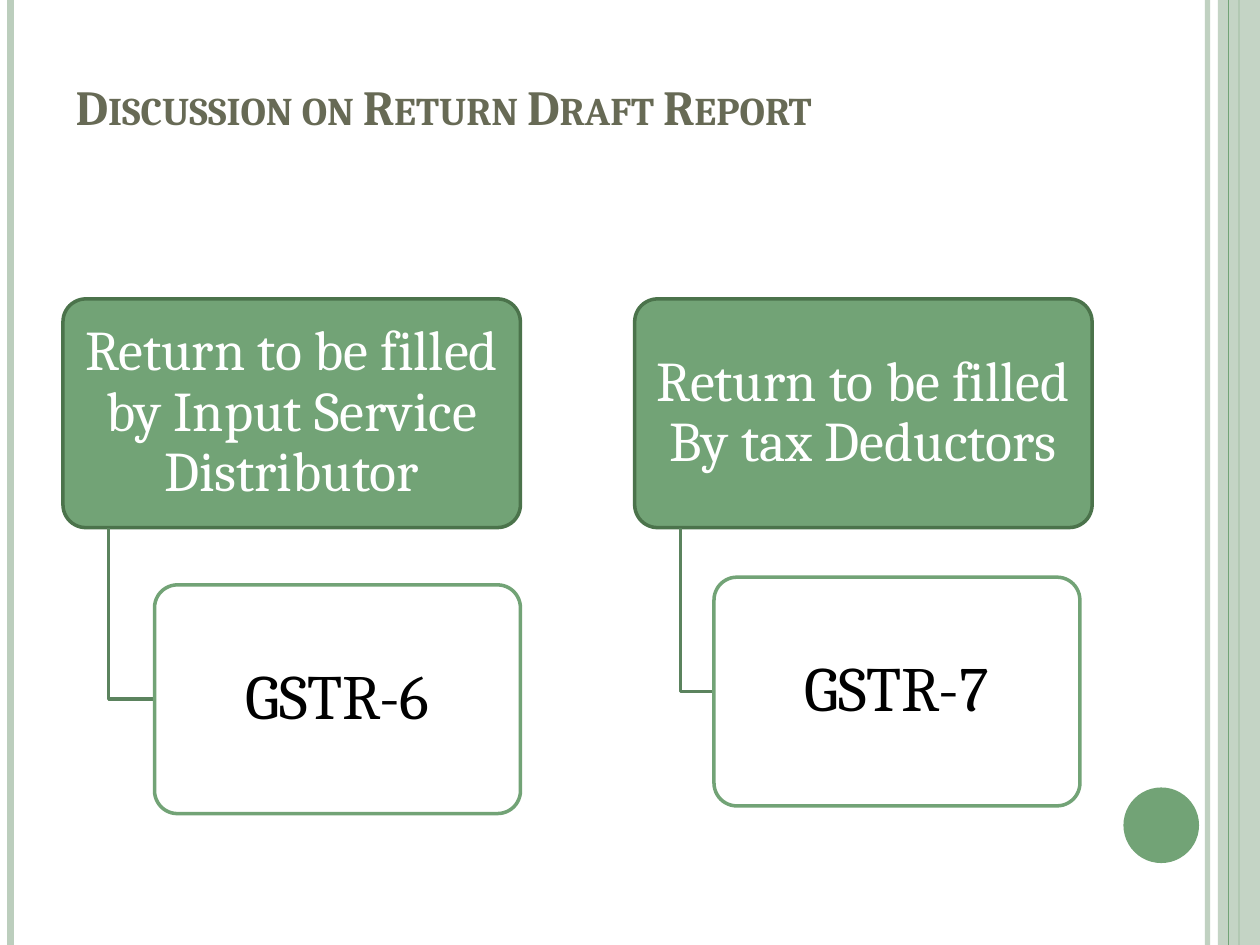
import pptx
import pptx.util
import pptx.dml.color
import pptx.enum.shapes
import pptx.enum.text
import pptx.oxml
import pptx.oxml.ns
from dataclasses import dataclass

Pt = pptx.util.Pt
SHAPES = pptx.enum.shapes.MSO_SHAPE
ALIGN = pptx.enum.text.PP_ALIGN
ANCHOR = pptx.enum.text.MSO_ANCHOR
A_NS = pptx.oxml.ns.nsdecls("a")


@dataclass(frozen=True)
class Theme:
    font: str = "Cambria"
    green: str = "72A376"
    pale: str = "BCCEBD"
    edge: str = "4B734B"
    link: str = "5B835E"
    title: str = "676A55"
    white: str = "FFFFFF"
    black: str = "000000"
    title_size: int = 28
    head_size: int = 32
    leaf_size: int = 36


def rgb(color):
    return pptx.dml.color.RGBColor.from_string(color)


def set_alpha(fill_parent, percent):
    """Make the solid colour below an element partly transparent."""
    for color in fill_parent.iter(pptx.oxml.ns.qn("a:srgbClr")):
        color.append(pptx.oxml.parse_xml(f'<a:alpha {A_NS} val="{percent * 1000}"/>'))


def write(tf, text, font, size, color, bold=False, align=ALIGN.LEFT,
          anchor=ANCHOR.MIDDLE, spacing=1.0, inset=(7.2, 3.6)):
    """Put one formatted paragraph in a text frame and return its run."""
    tf.word_wrap = True
    tf.auto_size = pptx.enum.text.MSO_AUTO_SIZE.NONE
    tf.vertical_anchor = anchor
    tf.margin_left = tf.margin_right = Pt(inset[0])
    tf.margin_top = tf.margin_bottom = Pt(inset[1])
    p = tf.paragraphs[0]
    p.alignment, p.line_spacing = align, spacing
    r = p.add_run()
    r.text = text
    r.font.name, r.font.size, r.font.bold = font, Pt(size), bold
    r.font.color.rgb = rgb(color)
    return r


class Deck:
    def __init__(self, prs, theme):
        self.theme = theme
        self.s = prs.slides.add_slide(prs.slide_layouts[5])

    def title(self, text, x, y, w, h):
        t, sp = self.theme, self.s.shapes.title
        sp.left, sp.top, sp.width, sp.height = Pt(x), Pt(y), Pt(w), Pt(h)
        r = write(sp.text_frame, text, t.font, t.title_size, t.title,
                  bold=True, anchor=ANCHOR.BOTTOM)
        # Small capitals and a soft shadow below the letters
        rpr = r.font._element
        rpr.set("cap", "small")
        rpr.find(pptx.oxml.ns.qn("a:solidFill")).addnext(pptx.oxml.parse_xml(
            f'<a:effectLst {A_NS}><a:outerShdw blurRad="50000" dist="50000" '
            'dir="5400000"><a:srgbClr val="000000"><a:alpha val="40000"/>'
            '</a:srgbClr></a:outerShdw></a:effectLst>'))

    def stripe(self, x, width, color, alpha=100):
        line = self.s.shapes.add_connector(
            pptx.enum.shapes.MSO_CONNECTOR.STRAIGHT, Pt(x), 0, Pt(x), Pt(540))
        line.line.width = Pt(width)
        line.line.color.rgb = rgb(color)
        sp_pr = line._element.spPr
        if alpha < 100:
            set_alpha(sp_pr, alpha)
        sp_pr.append(pptx.oxml.parse_xml(f"<a:effectLst {A_NS}/>"))

    def shape(self, kind, x, y, w, h, fill, line=None, alpha=100):
        sp = self.s.shapes.add_shape(kind, Pt(x), Pt(y), Pt(w), Pt(h))
        sp.shadow.inherit = False
        sp.fill.solid()
        sp.fill.fore_color.rgb = rgb(fill)
        if alpha < 100:
            set_alpha(sp._element.spPr, alpha)
        if line:
            sp.line.color.rgb = rgb(line)
            sp.line.width = Pt(2)
        else:
            sp.line.fill.background()
        return sp

    def card(self, text, x, y, w, h, size, color, fill, line, alpha=100):
        sp = self.shape(SHAPES.ROUNDED_RECTANGLE, x, y, w, h, fill, line, alpha)
        sp.adjustments[0] = 0.1
        write(sp.text_frame, text, self.theme.font, size, color,
              align=ALIGN.CENTER, spacing=0.9, inset=(4.8, 3.2))

    def elbow(self, x, top, right, bottom):
        pen = self.s.shapes.build_freeform(Pt(x), Pt(top))
        pen.add_line_segments([(Pt(x), Pt(bottom)), (Pt(right), Pt(bottom))], close=False)
        sp = pen.convert_to_shape()
        sp.shadow.inherit = False
        sp.fill.background()
        sp.line.color.rgb = rgb(self.theme.link)
        sp.line.width = Pt(2)

    def branch(self, head, leaf, x, leaf_x, leaf_y):
        """A heading card with one leaf card hanging below it."""
        t = self.theme
        top, head_w, leaf_w, h = 170.8, 261.4, 209.1, 130.7
        self.card(head, x, top, head_w, h, t.head_size, t.white, t.green, t.edge)
        self.elbow(x + head_w / 10, top + h, leaf_x, leaf_y + h / 2)
        self.card(leaf, leaf_x, leaf_y, leaf_w, h, t.leaf_size, t.black,
                  t.white, t.green, alpha=90)


def main():
    prs = pptx.Presentation()
    prs.slide_width, prs.slide_height = Pt(720), Pt(540)
    theme = Theme()
    deck = Deck(prs, theme)

    # Side stripes and dot
    deck.stripe(690, 3, theme.pale, alpha=93)
    deck.stripe(6, 4.5, theme.pale)
    deck.stripe(708, 1.5, theme.green)
    deck.shape(SHAPES.RECTANGLE, 696, 0, 24, 540, theme.pale, alpha=87)
    deck.stripe(702, 0.75, theme.green)
    deck.shape(SHAPES.OVAL, 642, 450, 43.2, 43.2, theme.green)

    # Title
    deck.title("Discussion on Return Draft Report", 36, 36, 588, 45)

    # Returns and their forms
    deck.branch("Return to be filled by Input Service Distributor", "GSTR-6",
                36, 88.3, 334.2)
    deck.branch("Return to be filled By tax Deductors", "GSTR-7",
                362.7, 408, 329.8)

    prs.save("out.pptx")


if __name__ == "__main__":
    main()
